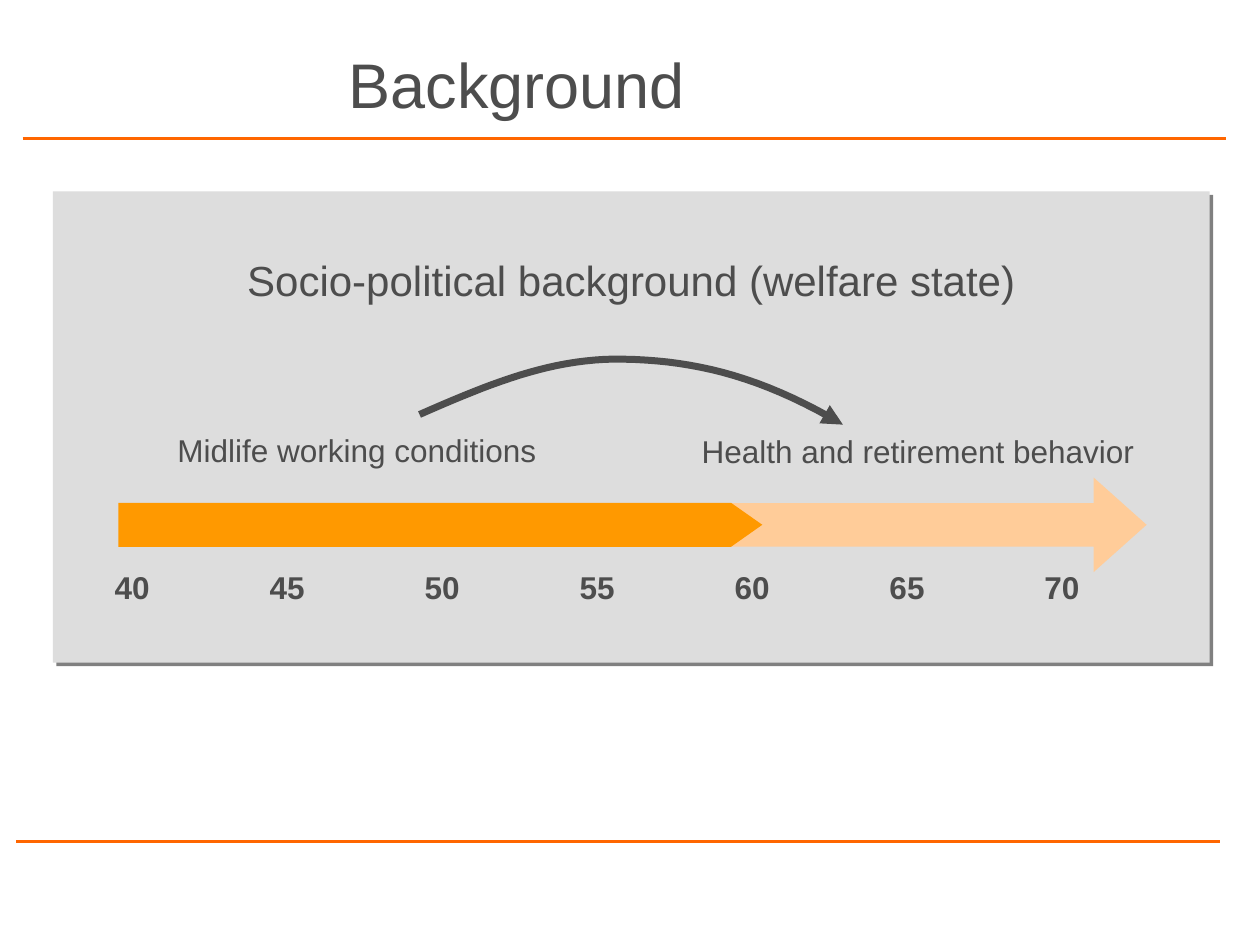
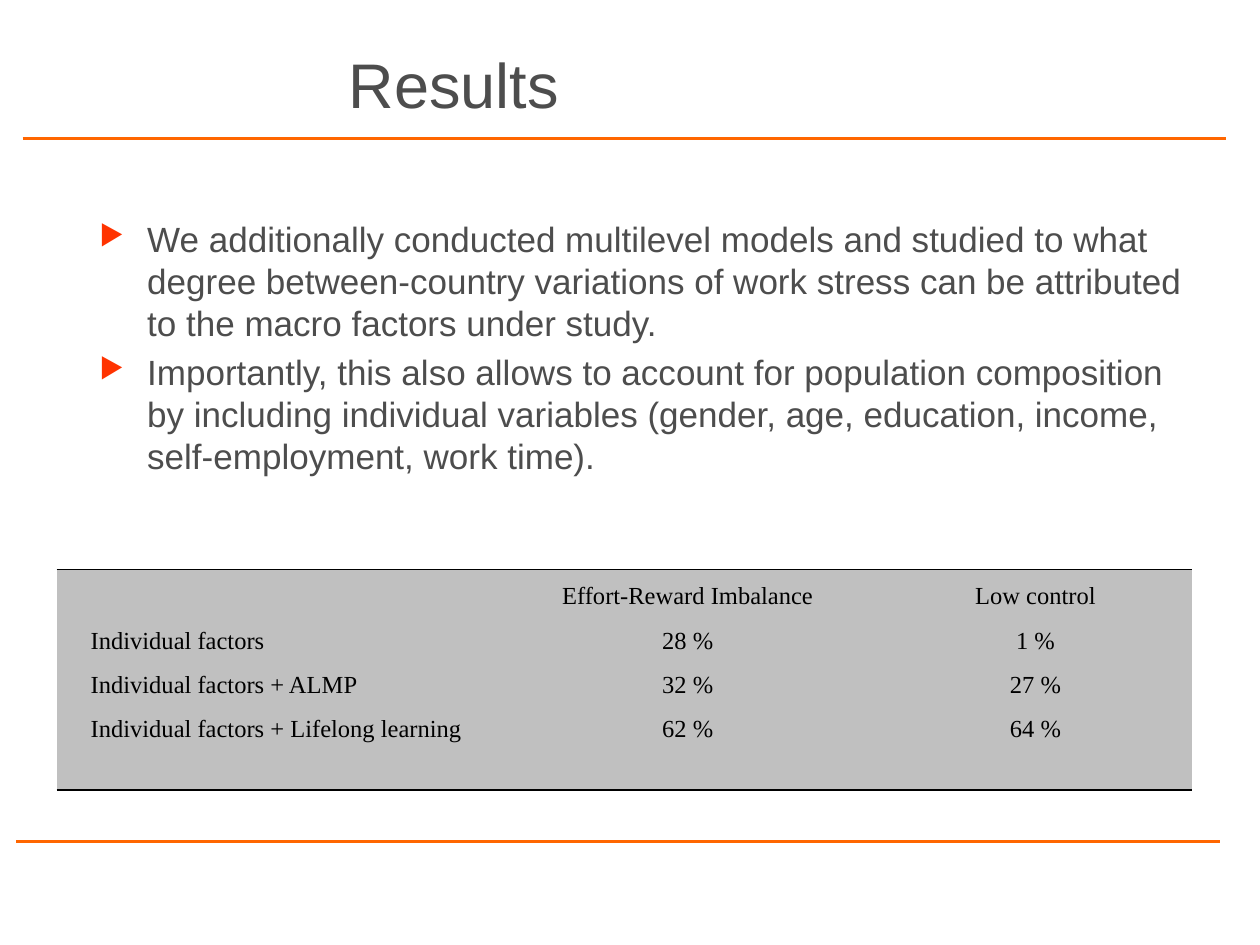
from lxml.etree import SubElement
from pptx import Presentation
from pptx.dml.color import RGBColor
from pptx.enum.shapes import MSO_CONNECTOR, MSO_SHAPE
from pptx.enum.text import MSO_ANCHOR, PP_ALIGN
from pptx.oxml import parse_xml
from pptx.oxml.ns import nsdecls, qn
from pptx.util import Pt

PX = 9144
COLORS = {
    "text": "4D4D4D", "rule": "FF6600", "panel": "DDDDDD", "shadow": "808080",
    "midlife": "FF9900", "later": "FFCC99", "bullet": "FF3300",
    "table": "C0C0C0", "black": "000000",
}
NO_TABLE_STYLE = "{2D5ABB26-0587-4C30-8999-92F81FD0307C}"


def px(*values):
    return [round(v * PX) for v in values]


def rgb(name):
    return RGBColor.from_string(COLORS[name])


def bezier(p0, p1, p2, p3, steps=20):
    def at(t):
        weights = ((1 - t) ** 3, 3 * t * (1 - t) ** 2, 3 * t * t * (1 - t), t ** 3)
        return tuple(sum(w * p[axis] for w, p in zip(weights, (p0, p1, p2, p3)))
                     for axis in (0, 1))
    return [at(i / steps) for i in range(1, steps + 1)]


class Deck:
    def __init__(self, width, height):
        self.prs = Presentation()
        self.prs.slide_width, self.prs.slide_height = px(width, height)
        self.s = None

    def slide(self, title):
        self.s = self.prs.slides.add_slide(self.prs.slide_layouts[6])
        self.rule(18, 110)
        self.rule(13, 668)
        self.text(267, 31, 705, 70, title, 36, anchor=MSO_ANCHOR.BOTTOM)

    def rule(self, x, y, length=955):
        line = self.s.shapes.add_connector(
            MSO_CONNECTOR.STRAIGHT, *px(x, y, x + length, y))
        line.line.color.rgb = rgb("rule")
        line.line.width = Pt(1.5)
        SubElement(line._element.spPr, qn("a:effectLst"))

    def style(self, p, size, font="Arial", color="text", bold=False):
        for r in p.runs:
            r.font.name = font
            r.font.size = Pt(size)
            r.font.bold = bold
            r.font.color.rgb = rgb(color)

    def text(self, x, y, w, h, text, size, anchor=MSO_ANCHOR.TOP, wrap=True):
        tf = self.s.shapes.add_textbox(*px(x, y, w, h)).text_frame
        tf.word_wrap = wrap
        tf.vertical_anchor = anchor
        tf.text = text
        for p in tf.paragraphs:
            self.style(p, size)
        return tf

    def bullets(self, x, y, w, h, items, size):
        tf = self.text(x, y, w, h, "\n".join(items), size)
        indent, = px(38)
        for i, p in enumerate(tf.paragraphs):
            pPr = p._p.get_or_add_pPr()
            pPr.set("marL", str(indent))
            pPr.set("indent", str(-indent))
            color = SubElement(pPr, qn("a:buClr"))
            SubElement(color, qn("a:srgbClr")).set("val", COLORS["bullet"])
            SubElement(pPr, qn("a:buSzPct")).set("val", "80000")
            SubElement(pPr, qn("a:buChar")).set("char", "▶")
            if i:
                p.space_before = Pt(size * 0.2)

    def shape(self, kind, x, y, w, h, fill, adjustments=()):
        sp = self.s.shapes.add_shape(kind, *px(x, y, w, h))
        sp.shadow.inherit = False
        sp.fill.solid()
        sp.fill.fore_color.rgb = rgb(fill)
        sp.line.fill.background()
        for i, value in enumerate(adjustments):
            sp.adjustments[i] = value
        return sp

    def panel(self, x, y, w, h, heading):
        sp = self.shape(MSO_SHAPE.RECTANGLE, x, y, w, h, "panel")
        sp._element.spPr.find(qn("a:effectLst")).append(parse_xml(
            f'<a:outerShdw {nsdecls("a")} blurRad="0" dist="{Pt(2.8)}" dir="2700000" '
            f'algn="ctr" rotWithShape="0"><a:srgbClr val="{COLORS["shadow"]}"/>'
            '</a:outerShdw>'))
        tf = sp.text_frame
        tf.vertical_anchor = MSO_ANCHOR.TOP
        tf.margin_top, = px(50)
        tf.text = heading
        p = tf.paragraphs[0]
        p.alignment = PP_ALIGN.CENTER
        self.style(p, 24)

    def curved_arrow(self, start, points, width):
        builder = self.s.shapes.build_freeform(*px(*start), scale=1.0)
        builder.add_line_segments([px(*point) for point in points], close=False)
        sp = builder.convert_to_shape()
        sp.shadow.inherit = False
        sp.fill.background()
        sp.line.color.rgb = rgb("text")
        sp.line.width = Pt(width)
        SubElement(sp.line._get_or_add_ln(), qn("a:tailEnd")).set("type", "triangle")

    def table(self, x, y, widths, row_height, rows):
        frame = self.s.shapes.add_table(
            len(rows), len(widths), *px(x, y, sum(widths), row_height * len(rows)))
        table = frame.table
        table.first_row = table.horz_banding = False
        table._tbl.tblPr.find(qn("a:tableStyleId")).text = NO_TABLE_STYLE
        for column, width in zip(table.columns, widths):
            column.width, = px(width)
        for row, values in zip(table.rows, rows):
            row.height, = px(row_height)
            for cell, value in zip(row.cells, values):
                cell.text = value
        return table

    def age_axis(self, x, y, ages):
        table = self.table(x, y, [123] * len(ages), 45, [[str(age) for age in ages]])
        for cell in table.iter_cells():
            cell.fill.background()
            self.style(cell.text_frame.paragraphs[0], 18, bold=True)

    def result_table(self, x, y, widths, row_height, rows):
        table = self.table(x, y, widths, row_height, rows)
        for row in table.rows:
            for column, cell in enumerate(row.cells):
                cell.margin_left, cell.margin_right = px(7, 7)
                cell.margin_top = cell.margin_bottom = 0
                cell.fill.solid()
                cell.fill.fore_color.rgb = rgb("table")
                p = cell.text_frame.paragraphs[0]
                p.alignment = PP_ALIGN.CENTER if column else PP_ALIGN.JUSTIFY
                p.line_spacing = 1.5
                p._p.get_or_add_pPr().set("indent", str(px(20)[0]))
                self.style(p, 14, "Times New Roman", "black")
        for row, edge in ((0, "lnT"), (len(rows) - 1, "lnB")):
            for cell in table.rows[row].cells:
                cell._tc.get_or_add_tcPr().insert(0, parse_xml(
                    f'<a:{edge} {nsdecls("a")} w="{Pt(1)}"><a:solidFill>'
                    f'<a:srgbClr val="{COLORS["black"]}"/></a:solidFill></a:{edge}>'))


def background(deck):
    deck.slide("Background")
    deck.panel(42, 152, 918, 374, "Socio-political background (welfare state)")
    deck.shape(MSO_SHAPE.RIGHT_ARROW, 461, 379, 449, 75, "later", (0.46, 0.56))
    deck.shape(MSO_SHAPE.PENTAGON, 94, 399, 511, 35, "midlife", (0.71,))
    deck.age_axis(81, 448, range(40, 71, 5))
    deck.text(547, 338, 363, 40, "Health and retirement behavior", 18, wrap=False)
    deck.text(131, 337, 308, 40, "Midlife working conditions", 18, wrap=False)
    start, peak, end = (333, 329), (487, 285), (669, 337)
    rise = bezier(start, (392, 303), (436, 286), peak)
    fall = bezier(peak, (545, 285), (600, 296), end)
    deck.curved_arrow(start, rise + fall, 4)


def results(deck):
    deck.slide("Results")
    deck.result_table(45, 452, [331, 17, 284, 268], 35, [
        ["", "", "Effort-Reward Imbalance", "Low control"],
        ["Individual factors", "", "28 %", "1 %"],
        ["Individual factors + ALMP", "", "32 %", "27 %"],
        ["Individual factors + Lifelong learning", "", "62 %", "64 %"],
        ["", "", "", ""],
    ])
    deck.bullets(69, 168, 898, 251, [
        "We additionally conducted multilevel models and studied to what degree "
        "between-country variations of work stress can be attributed to the macro "
        "factors under study.",
        "Importantly, this also allows to account for population composition by "
        "including individual variables (gender, age, education, income, "
        "self-employment, work time).",
    ], 20)


def main():
    deck = Deck(1000, 750)
    background(deck)
    results(deck)
    deck.prs.save("out.pptx")


if __name__ == "__main__":
    main()
